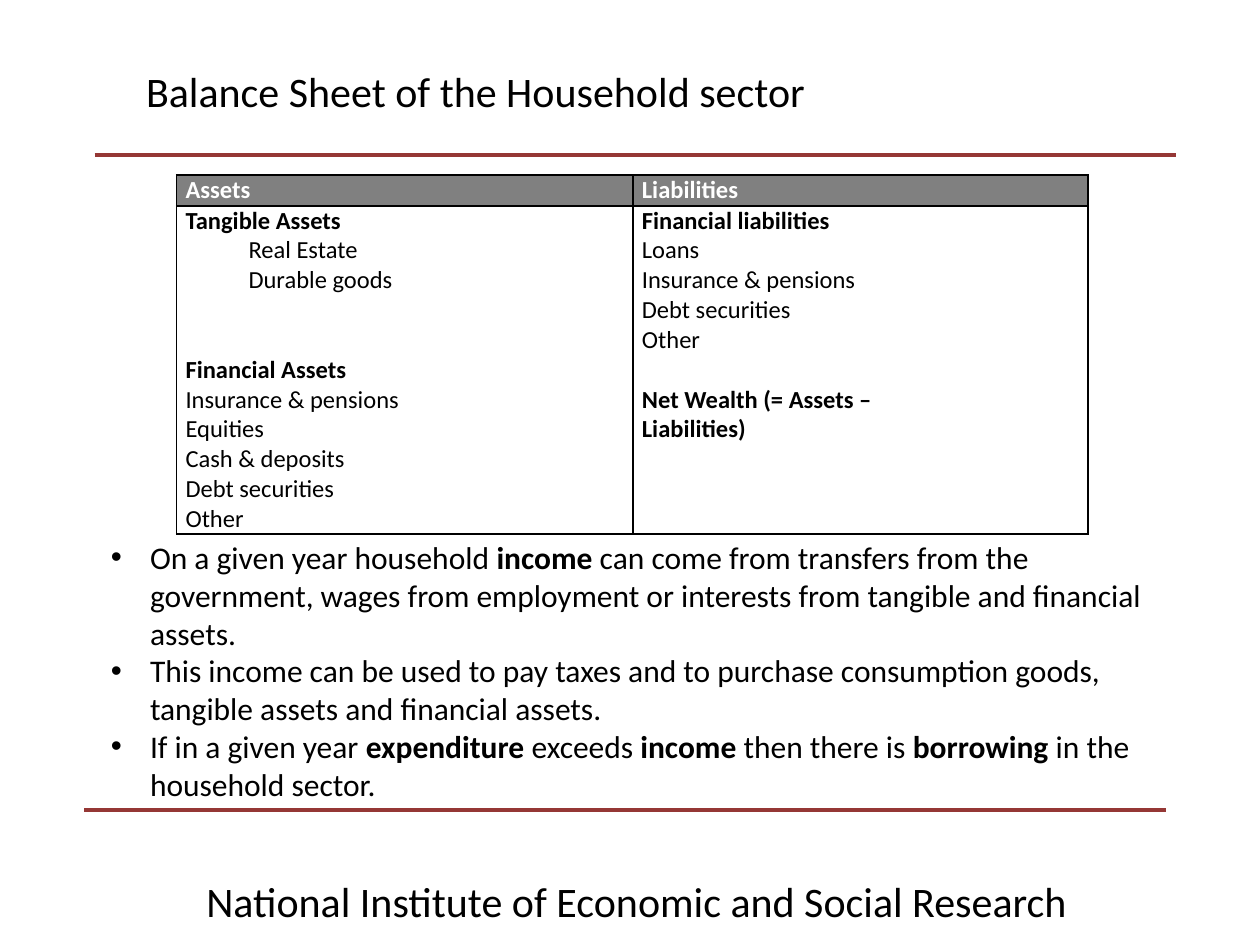
import pptx
import pptx.dml.color
import pptx.enum.shapes
import pptx.enum.text
import pptx.oxml.ns
import pptx.util
from lxml import etree

Cm = pptx.util.Cm
Pt = pptx.util.Pt
BLACK = pptx.dml.color.RGBColor(0x00, 0x00, 0x00)
WHITE = pptx.dml.color.RGBColor(0xFF, 0xFF, 0xFF)
GREY = pptx.dml.color.RGBColor(0x80, 0x80, 0x80)
DARK_RED = pptx.dml.color.RGBColor(0x95, 0x37, 0x35)

COLUMN_WIDTHS = [5.16, 4.04, 5.77, 3.4]
ROW_HEIGHTS = [0.62, 3.0, 3.61]
BALANCE_SHEET = [
    [["**Assets**"], ["**Liabilities**"]],
    [["**Tangible Assets**", ">Real Estate", ">Durable goods"],
     ["**Financial liabilities**", "Loans", "Insurance & pensions",
      "Debt securities", "Other"]],
    [["**Financial Assets**", "Insurance & pensions", "Equities",
      "Cash & deposits", "Debt securities", "Other"],
     ["**Net Wealth (= Assets – Liabilities)**"]],
]
INCOME_POINTS = [
    "On a given year household **income** can come from transfers from the "
    "government, wages from employment or interests from tangible and "
    "financial assets.",
    "This income can be used to pay taxes and to purchase consumption goods, "
    "tangible assets and financial assets.",
    "If in a given year **expenditure **exceeds **income** then there is "
    "**borrowing **in the household sector.",
]


def write(frame, text, size=14, color=BLACK, indent=0, hanging=0, first=False):
    """Write one left-aligned paragraph, with bold between double asterisks."""
    paragraph = frame.paragraphs[0] if first else frame.add_paragraph()
    paragraph.alignment = pptx.enum.text.PP_ALIGN.LEFT
    paragraph.space_before = Pt(0)
    if indent:
        properties = paragraph._p.get_or_add_pPr()
        properties.set("marL", str(Cm(indent)))
        properties.set("indent", str(-Cm(hanging)))
    for position, part in enumerate(text.split("**")):
        if part:
            run = paragraph.add_run()
            run.text = part
            run.font.name = "Calibri"
            run.font.size = Pt(size)
            run.font.bold = position % 2 == 1
            run.font.color.rgb = color


def place(shape, left, top, width, height):
    """Move a text shape to its box and let its text wrap from the top."""
    shape.left, shape.top = Cm(left), Cm(top)
    shape.width, shape.height = Cm(width), Cm(height)
    frame = shape.text_frame
    frame.word_wrap = True
    frame.auto_size = pptx.enum.text.MSO_AUTO_SIZE.NONE
    frame.vertical_anchor = pptx.enum.text.MSO_ANCHOR.TOP
    return frame


def add_rule(slide, left, top, width):
    """Draw a horizontal dark red rule."""
    rule = slide.shapes.add_connector(
        pptx.enum.shapes.MSO_CONNECTOR.STRAIGHT,
        Cm(left), Cm(top), Cm(left + width), Cm(top))
    rule.line.color.rgb = DARK_RED
    rule.line.width = Pt(2.25)
    etree.SubElement(rule._element.spPr, pptx.oxml.ns.qn("a:effectLst"))


def set_borders(cell, sides):
    """Draw black borders on the named sides of a cell and clear the others."""
    properties = cell._tc.get_or_add_tcPr()
    for position, side in enumerate("LRTB"):
        border = etree.Element(pptx.oxml.ns.qn(f"a:ln{side}"), w=str(Pt(1)))
        if side in sides:
            fill = etree.SubElement(border, pptx.oxml.ns.qn("a:solidFill"))
            etree.SubElement(fill, pptx.oxml.ns.qn("a:srgbClr"), val=str(BLACK))
        else:
            etree.SubElement(border, pptx.oxml.ns.qn("a:noFill"))
        properties.insert(position, border)


def format_cell(cell, row, column):
    """Set the margins, fill and borders that belong to a cell's position."""
    cell.margin_left = cell.margin_right = Cm(0.18)
    cell.margin_top = cell.margin_bottom = 0
    if row == 0:
        cell.fill.solid()
        cell.fill.fore_color.rgb = GREY
    else:
        cell.fill.background()
    outer = "R" if column % 2 else "L"
    set_borders(cell, outer + ["TB", "T", "B"][row])


def add_balance_sheet(slide, left, top):
    """Build the table of assets and liabilities, two columns to each side."""
    table = slide.shapes.add_table(
        len(ROW_HEIGHTS), len(COLUMN_WIDTHS), Cm(left), Cm(top),
        Cm(sum(COLUMN_WIDTHS)), Cm(sum(ROW_HEIGHTS))).table
    table.first_row = table.horz_banding = False
    for column, width in zip(table.columns, COLUMN_WIDTHS):
        column.width = Cm(width)
    for row, height in enumerate(ROW_HEIGHTS):
        table.rows[row].height = Cm(height)
        for column in range(len(COLUMN_WIDTHS)):
            cell = table.cell(row, column)
            format_cell(cell, row, column)
            if column % 2:
                ending = cell.text_frame.paragraphs[0]._p.get_or_add_endParaRPr()
                ending.set("sz", "1400")
                continue
            for position, item in enumerate(BALANCE_SHEET[row][column // 2]):
                write(cell.text_frame, item.lstrip(">"),
                      color=BLACK if row else WHITE,
                      indent=1.27 if item.startswith(">") else 0,
                      first=position == 0)
    table.cell(2, 2).margin_top = Cm(0.6)


def add_header(slide, left, top, width):
    """Fill the title and draw the rule below it."""
    title = place(slide.shapes.title, left + 0.78, top, width - 1.4, 1.27)
    write(title, "Balance Sheet of the Household sector", size=24, first=True)
    add_rule(slide, left, top + 1.93, width)


def add_income_points(slide, left, top, width, height):
    """Fill the body with the bulleted points on household income."""
    points = place(slide.placeholders[1], left, top, width, height)
    for position, point in enumerate(INCOME_POINTS):
        write(points, point, size=18, indent=0.79, hanging=0.79,
              first=position == 0)


def add_footer(slide, left, top, width):
    """Draw the lower rule and the institute's name below it."""
    add_rule(slide, left, top, width)
    institute = place(slide.shapes.add_textbox(0, 0, 0, 0),
                      left + 2.21, top + 1.2, 20.19, 1.02)
    write(institute, "National Institute of Economic and Social Research",
          size=24, first=True)


def main():
    """Build the slide and save it."""
    presentation = pptx.Presentation()
    presentation.slide_width, presentation.slide_height = Cm(25.4), Cm(19.05)
    slide = presentation.slides.add_slide(presentation.slide_layouts[1])
    add_header(slide, 1.91, 1.19, 21.8)
    add_balance_sheet(slide, 3.56, 3.53)
    add_income_points(slide, 1.98, 10.72, 21.59, 6.4)
    add_footer(slide, 1.7, 16.33, 21.8)
    presentation.save("out.pptx")


if __name__ == "__main__":
    main()
